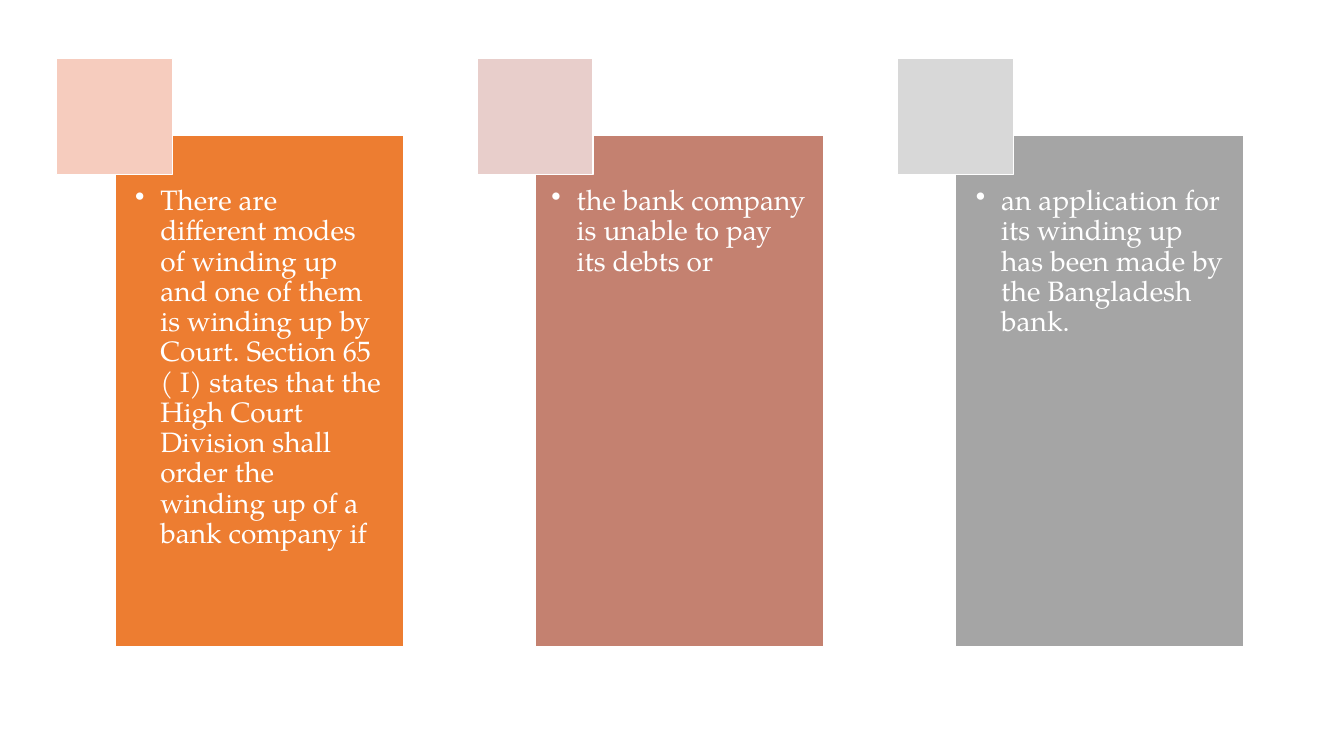
from dataclasses import dataclass

from lxml import etree
from pptx import Presentation
from pptx.dml.color import RGBColor
from pptx.enum.shapes import MSO_SHAPE
from pptx.enum.text import MSO_ANCHOR, PP_ALIGN
from pptx.oxml.ns import qn
from pptx.util import Inches, Pt

RECT = MSO_SHAPE.RECTANGLE
TOP = MSO_ANCHOR.TOP
LEFT = PP_ALIGN.LEFT


@dataclass
class Theme:
    white: str = "FFFFFF"
    panels: tuple = ("ED7D31", "C48170", "A5A5A5")
    tiles: tuple = ("F6CCBE", "E8CECB", "D8D8D8")
    font: str = "TeX Gyre Pagella"
    size: int = 20


theme = Theme()
white = RGBColor.from_string(theme.white)

# Text of each panel and its side margin
items = [
    ("There are different modes of winding up and one of them is winding up "
     "by Court. Section 65 ( I) states that the High Court Division shall "
     "order the winding up of a bank company if", 0.2),
    ("the bank company is unable to pay its debts or", 0.16),
    ("an application for its winding up has been made by the Bangladesh bank.",
     0.2),
]
pitch = 4.17


def add_box(x, y, w, h, color):
    """Add a filled rectangle with a thin white edge."""
    box = slide.shapes.add_shape(RECT, Inches(x), Inches(y), Inches(w), Inches(h))
    box.shadow.inherit = False
    box.fill.solid()
    box.fill.fore_color.rgb = RGBColor.from_string(color)
    box.line.color.rgb = white
    box.line.width = Pt(1)
    return box


prs = Presentation()
prs.slide_width = Inches(13.33)
prs.slide_height = Inches(7.5)
slide = prs.slides.add_slide(prs.slide_layouts[6])

for i, (text, side) in enumerate(items):
    panel = add_box(1.14 + i * pitch, 1.34, 2.86, 5.08, theme.panels[i])
    add_box(0.56 + i * pitch, 0.58, 1.15, 1.15, theme.tiles[i])

    frame = panel.text_frame
    frame_format = {
        "word_wrap": True,
        "vertical_anchor": TOP,
        "margin_left": Inches(side),
        "margin_right": Inches(side),
        "margin_top": Inches(0.51),
        "margin_bottom": Inches(side),
    }
    for name, value in frame_format.items():
        setattr(frame, name, value)

    para = frame.paragraphs[0]
    para_format = {
        "level": 1,
        "alignment": LEFT,
        "line_spacing": 0.9,
        "space_after": Pt(3),
    }
    for name, value in para_format.items():
        setattr(para, name, value)
    props = para._p.get_or_add_pPr()
    props.set("marL", str(Inches(0.25)))
    props.set("indent", str(Inches(-0.25)))
    etree.SubElement(props, qn("a:buChar")).set("char", "•")

    run = para.add_run()
    run.text = text
    run.font.color.rgb = white
    for name, value in {"name": theme.font, "size": Pt(theme.size)}.items():
        setattr(run.font, name, value)

prs.save("out.pptx")
